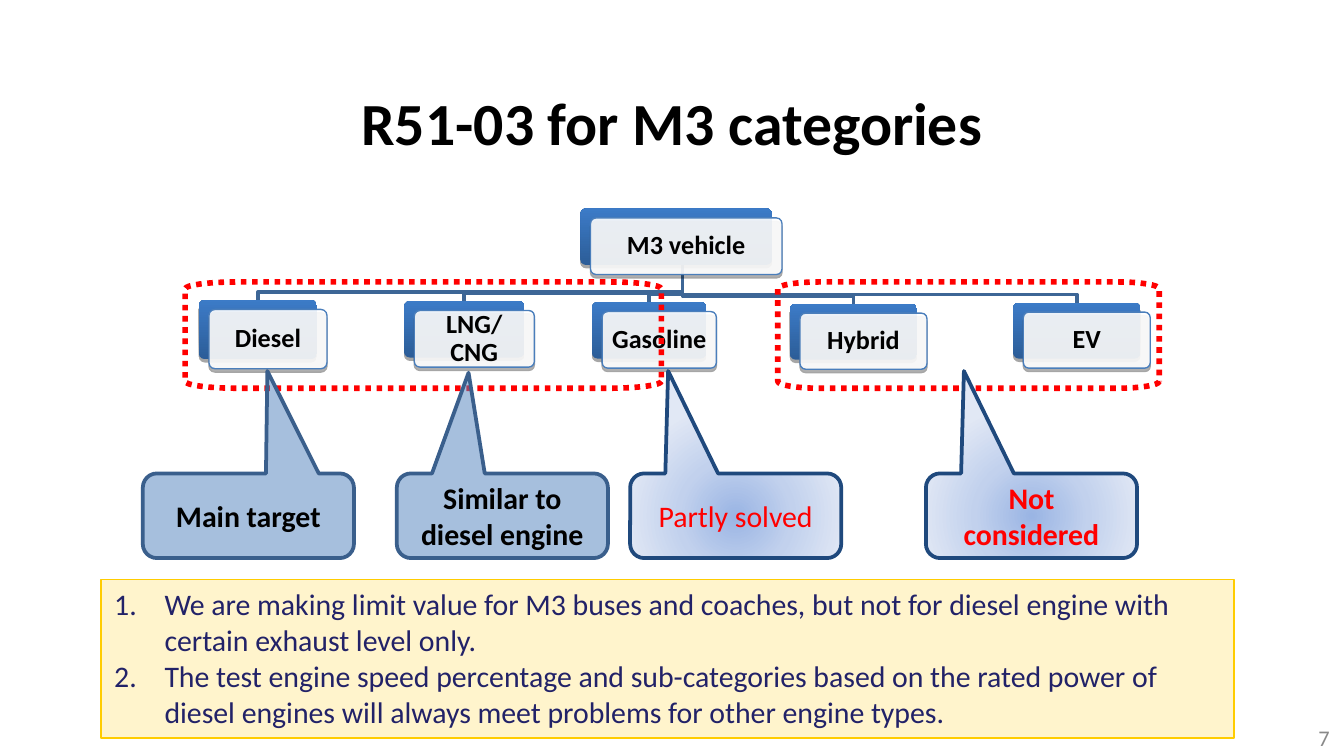
import math

from lxml import etree
from pptx import Presentation
from pptx import util as u
from pptx.dml import color
from pptx.enum import dml, shapes, text
from pptx.oxml import ns

# Content: places are left, top, width, height in centimetres
FONT = "Calibri"
COLORS = {
    "black": "000000", "white": "FFFFFF", "grey": "898989", "red": "FF0000",
    "branch": "3D6696", "node edge": "4A7EBB", "blue": "4F81BD",
    "blue edge": "3A5F8C", "navy": "1F497D", "gold": "FFCC00", "ink": "222268",
}
NODE_STOPS = [(0, "2C5D98"), (100, "3C7BC7")]
GLOW_STOPS = [(0, "9AB5E4"), (50, "C2D1ED"), (100, "E1E8F5")]

TITLE = "R51-03 for M3 categories"
ROOT = ("M3 vehicle", (10.97, 3.94, 3.62, 1.07))
ENGINES = [
    ("Diesel", (3.76, 5.67, 2.23, 1.12)),
    ("LNG/CNG", (7.64, 5.69, 2.27, 1.07)),
    ("Gasoline", (11.19, 5.71, 2.16, 1.07)),
    ("Hybrid", (14.93, 5.74, 2.4, 1.06)),
    ("EV", (19.15, 5.72, 2.4, 1.06)),
]
TRUNK_X, TRUNK_Y, BRANCH_DROP = 12.9, 5.0, 0.15
CARD_SHIFT = (0.19, 0.18)
FRAMES = [(3.5, 5.33, 9.0, 2.01), (14.7, 5.33, 7.21, 2.01)]
CALLOUT_TOP, CALLOUT_SIZE = 8.95, (3.99, 1.6)
CALLOUTS = [  # text, left, pointer, glowing, colour, bold
    ("Main target", 2.7, (0.09, -1.71), False, "black", True),
    ("Similar to diesel engine", 7.5, (-0.16, -1.69), False, "black", True),
    ("Partly solved", 11.91, (-0.32, -1.71), True, "red", False),
    ("Not considered", 17.5, (-0.32, -1.71), True, "red", True),
]
NOTES = [
    "We are making limit value for M3 buses and coaches, but not for diesel "
    "engine with certain exhaust level only.",
    "The test engine speed percentage and sub-categories based on the rated "
    "power of diesel engines will always meet problems for other engine types.",
]


def rgb(name):
    return color.RGBColor.from_string(COLORS[name])


def cms(values):
    return [u.Cm(value) for value in values]


def child(parent, tag, **attributes):
    node = etree.SubElement(parent, ns.qn("a:" + tag))
    for key, value in attributes.items():
        node.set(key, str(value))
    return node


def paint(shape, fill=None, alpha=100, line=None, width=1):
    shape.shadow.inherit = False
    if fill:
        shape.fill.solid()
        shape.fill.fore_color.rgb = rgb(fill)
        solid = shape.element.spPr.find(ns.qn("a:solidFill"))
        child(solid[0], "alpha", val=alpha * 1000)
    else:
        shape.fill.background()
    if line:
        shape.line.color.rgb = rgb(line)
        shape.line.width = u.Pt(width)
    else:
        shape.line.fill.background()


def paint_gradient(shape, stops, circle=False):
    shape.fill.gradient()
    gradient = shape.element.spPr.find(ns.qn("a:gradFill"))
    for old in list(gradient):
        gradient.remove(old)
    stop_list = child(gradient, "gsLst")
    for position, value in stops:
        child(child(stop_list, "gs", pos=position * 1000), "srgbClr", val=value)
    if circle:
        center = child(gradient, "path", path="circle")
        child(center, "fillToRect", l=50000, t=50000, r=50000, b=50000)
    else:
        child(gradient, "lin", ang=270 * 60000, scaled=0)


def add_shadow(shape):
    effects = shape.element.spPr.find(ns.qn("a:effectLst"))
    outer = child(effects, "outerShdw", blurRad=0, dist=u.Pt(1.8),
                  dir=90 * 60000, rotWithShape=0)
    child(child(outer, "srgbClr", val=COLORS["black"]), "alpha", val=35000)


def write(shape, lines, size, ink, bold=False, align=text.PP_ALIGN.CENTER,
          anchor=text.MSO_ANCHOR.MIDDLE):
    frame = shape.text_frame
    frame.word_wrap = True
    frame.vertical_anchor = anchor
    for index, line in enumerate(lines):
        para = frame.add_paragraph() if index else frame.paragraphs[0]
        para.alignment = align
        span = para.add_run()
        span.text = line
        span.font.name, span.font.size = FONT, u.Pt(size)
        span.font.bold, span.font.color.rgb = bold, rgb(ink)
    return frame


def add_outline(page, points, close):
    start, *rest = [tuple(cms(point)) for point in points]
    builder = page.shapes.build_freeform(*start)
    builder.add_line_segments(rest, close=close)
    return builder.convert_to_shape()


def add_node(page, label, place):
    left, top, width, height = place
    for is_card in (False, True):
        dx, dy = CARD_SHIFT if is_card else (0, 0)
        box = page.shapes.add_shape(shapes.MSO_SHAPE.ROUNDED_RECTANGLE,
                                    *cms((left + dx, top + dy, width, height)))
        box.adjustments[0] = 0.1
        if is_card:
            paint(box, "white", 90, "node edge", 0.75)
            frame = write(box, [label], 14, "black", True)
            frame.margin_left = frame.margin_right = u.Cm(0.15)
            frame.margin_top = frame.margin_bottom = u.Cm(0.15)
            frame.paragraphs[0].line_spacing = 0.9
            frame.paragraphs[0].space_after = u.Pt(3.8)
        else:
            paint(box)
            paint_gradient(box, NODE_STOPS)
        add_shadow(box)


def frame_points(left, top, width, height, steps=8):
    """Rectangle with flat elliptical corners."""
    rx, ry = width * 0.11, height * 0.065
    corners = [(left + width - rx, top + height - ry), (left + rx, top + height - ry),
               (left + rx, top + ry), (left + width - rx, top + ry)]
    for quarter, (x, y) in enumerate(corners):
        for step in range(steps + 1):
            angle = (quarter + step / steps) * math.pi / 2
            yield x + rx * math.cos(angle), y + ry * math.sin(angle)


def main():
    deck = Presentation()
    deck.slide_width, deck.slide_height = cms((25.4, 14.29))
    page = deck.slides.add_slide(deck.slide_layouts[5])

    # Title and page number
    title = page.shapes.title
    title.left, title.top, title.width, title.height = cms((1.27, 0.76, 22.86, 2.39))
    write(title, [TITLE], 32, "black", True).paragraphs[0].line_spacing = 1.5
    number = page.shapes.add_textbox(*cms((24.41, 13.59, 0.97, 0.69)))
    write(number, ["7"], 12, "grey", align=text.PP_ALIGN.RIGHT)

    # Tree: branches behind, nodes in front
    for label, (left, top, width, height) in ENGINES:
        x, bend = left + width / 2, top - BRANCH_DROP
        branch = add_outline(page, [(TRUNK_X, TRUNK_Y), (TRUNK_X, bend),
                                    (x, bend), (x, top)], close=False)
        paint(branch, line="branch", width=2)
    for label, place in [ROOT] + ENGINES:
        add_node(page, label, place)

    # Dotted group frames
    for place in FRAMES:
        group = add_outline(page, frame_points(*place), close=True)
        paint(group, line="red", width=3)
        group.line.dash_style = dml.MSO_LINE.ROUND_DOT

    # Callouts
    for label, left, pointer, glowing, ink, bold in CALLOUTS:
        box = page.shapes.add_shape(shapes.MSO_SHAPE.ROUNDED_RECTANGULAR_CALLOUT,
                                    *cms((left, CALLOUT_TOP, *CALLOUT_SIZE)))
        box.adjustments[0], box.adjustments[1] = pointer
        if glowing:
            paint(box, line="navy", width=2)
            paint_gradient(box, GLOW_STOPS, circle=True)
        else:
            paint(box, "blue", 50, "blue edge", 2)
        write(box, [label], 16, ink, bold)

    # Numbered notes
    panel = page.shapes.add_shape(shapes.MSO_SHAPE.RECTANGLE,
                                  *cms((1.91, 10.95, 21.41, 3.0)))
    paint(panel, "gold", 20, "gold", 0.75)
    frame = write(panel, NOTES, 16, "ink", align=text.PP_ALIGN.LEFT,
                  anchor=text.MSO_ANCHOR.TOP)
    frame.auto_size = text.MSO_AUTO_SIZE.SHAPE_TO_FIT_TEXT
    for para in frame.paragraphs:
        layout = para._p.get_or_add_pPr()
        layout.set("marL", str(u.Cm(0.95)))
        layout.set("indent", str(-u.Cm(0.95)))
        child(layout, "buAutoNum", type="arabicPeriod")

    deck.save("out.pptx")


if __name__ == "__main__":
    main()
